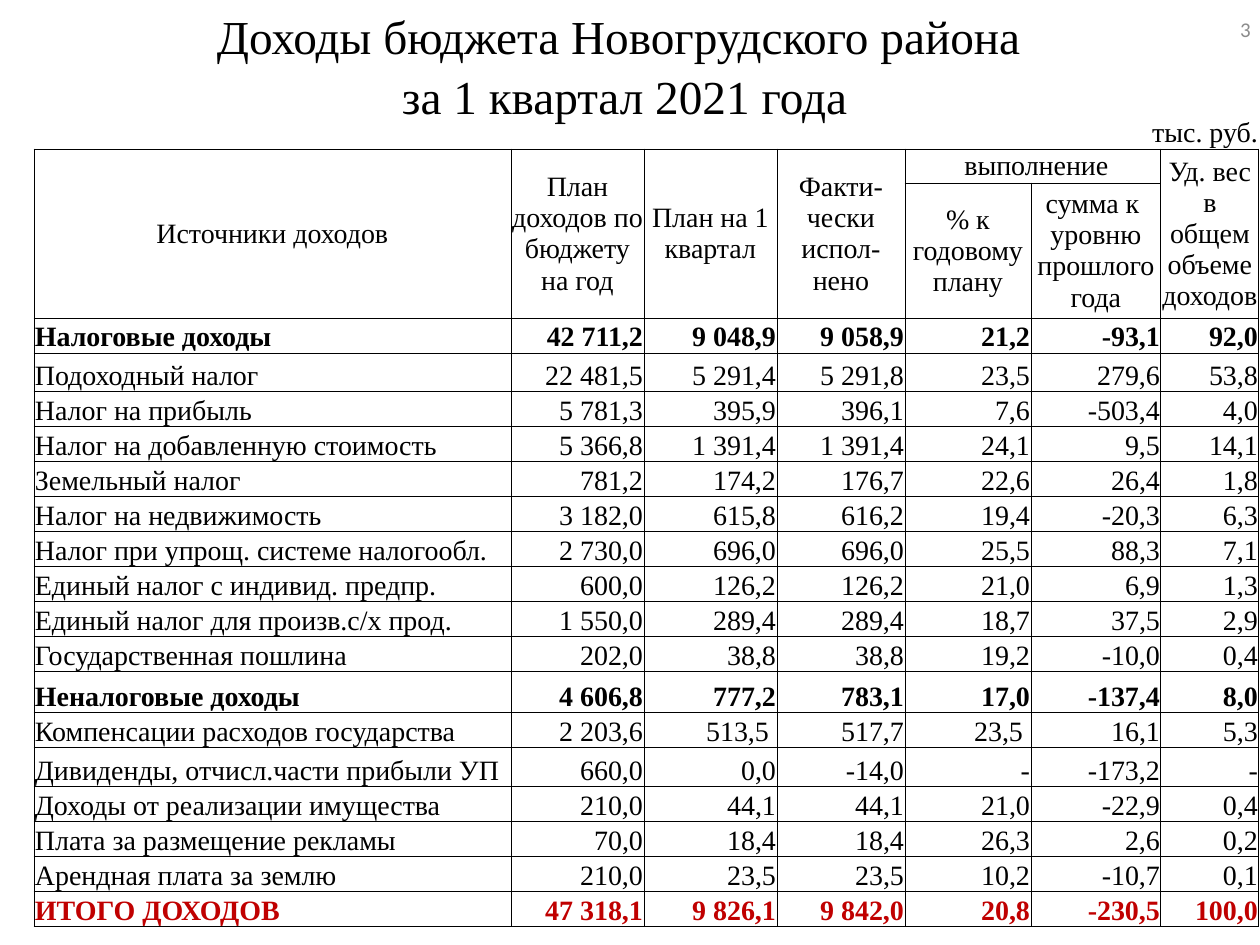
from lxml import etree
from pptx import Presentation
from pptx.dml.color import RGBColor
from pptx.enum.text import MSO_ANCHOR, MSO_AUTO_SIZE, PP_ALIGN
from pptx.oxml.ns import qn
from pptx.util import Emu, Pt

LEFT, CENTER, RIGHT = PP_ALIGN.LEFT, PP_ALIGN.CENTER, PP_ALIGN.RIGHT
MIDDLE, BOTTOM = MSO_ANCHOR.MIDDLE, MSO_ANCHOR.BOTTOM
NO_AUTOFIT = MSO_AUTO_SIZE.NONE
TITLE_ONLY = 5
SERIF, SANS = "Times New Roman", "Calibri"
BLACK, GREY, RED = "000000", "8C8C8C", "C00000"
PX_PER_INCH = 126

HEADER = [
    "|||||тыс. руб.|",
    "Источники доходов|План доходов по бюджету на год|План на 1 квартал|"
    "Факти-чески испол-нено| выполнение||Уд. вес в общем объеме доходов",
    "||||% к годовому плану|сумма к \nуровню прошлого года|",
]
INCOME = [
    "Налоговые доходы|42 711,2|9 048,9|9 058,9|21,2|-93,1|92,0",
    "Подоходный налог|22 481,5|5 291,4|5 291,8|23,5|279,6|53,8",
    "Налог на прибыль|5 781,3|395,9|396,1|7,6|-503,4|4,0",
    "Налог на добавленную стоимость|5 366,8|1 391,4|1 391,4|24,1|9,5|14,1",
    "Земельный налог|781,2|174,2|176,7|22,6|26,4|1,8",
    "Налог на недвижимость|3 182,0|615,8|616,2|19,4|-20,3|6,3",
    "Налог при упрощ. системе налогообл.|2 730,0|696,0|696,0|25,5|88,3|7,1",
    "Единый налог с индивид. предпр.|600,0|126,2|126,2|21,0|6,9|1,3",
    "Единый налог для произв.с/х прод.|1 550,0|289,4|289,4|18,7|37,5|2,9",
    "Государственная пошлина|202,0|38,8|38,8|19,2|-10,0|0,4",
    "Неналоговые доходы|4 606,8|777,2|783,1|17,0|-137,4|8,0",
    "Компенсации расходов государства|2 203,6|513,5 |517,7|23,5 |16,1|5,3",
    "Дивиденды, отчисл.части прибыли УП|660,0|0,0|-14,0|-|-173,2|-",
    "Доходы от реализации имущества|210,0|44,1|44,1|21,0|-22,9|0,4",
    "Плата за размещение рекламы|70,0|18,4|18,4|26,3|2,6|0,2",
    "Арендная плата за землю|210,0|23,5|23,5|10,2|-10,7|0,1",
    "ИТОГО ДОХОДОВ|47 318,1|9 826,1|9 842,0|20,8|-230,5|100,0",
]
SUBTOTALS = ("Налоговые доходы", "Неналоговые доходы")
TOTAL = "ИТОГО ДОХОДОВ"
COLUMN_WIDTHS = [477, 133, 133, 128, 126, 130, 98]
HEADER_HEIGHTS = [34, 34, 135]
INCOME_HEIGHT = 35
TALL_ROWS = {"Подоходный налог": 39, "Неналоговые доходы": 41,
             "Дивиденды, отчисл.части прибыли УП": 39}
MERGES = [((0, 5), (0, 6)), ((1, 4), (1, 5))]
MERGES += [((1, column), (2, column)) for column in (0, 1, 2, 3, 6)]


def px(length):
    return Emu(round(length * 914400 / PX_PER_INCH))


def rgb(color):
    return RGBColor.from_string(color)


def format_text(frame, align, size, font=SERIF, color=BLACK, bold=False):
    for paragraph in frame.paragraphs:
        paragraph.alignment = align
        paragraph.font.size = Pt(size)
        paragraph.font.name = font
        paragraph.font.bold = bold
        paragraph.font.color.rgb = rgb(color)


def set_borders(cell, drawn_sides):
    properties = cell._tc.get_or_add_tcPr()
    for position, side in enumerate("LRTB"):
        line = etree.Element(qn(f"a:ln{side}"), w=str(Pt(0.5)))
        if side in drawn_sides:
            fill = etree.SubElement(line, qn("a:solidFill"))
            etree.SubElement(fill, qn("a:srgbClr"), val=BLACK)
        else:
            etree.SubElement(line, qn("a:noFill"))
        properties.insert(position, line)


def place_title(slide, left, top, width, height):
    title = slide.shapes.title
    title.left, title.top, title.width, title.height = map(px, (left, top, width, height))
    frame = title.text_frame
    frame.text = "Доходы бюджета Новогрудского района \vза 1 квартал 2021 года"
    frame.auto_size = NO_AUTOFIT
    frame.vertical_anchor = MIDDLE
    frame.paragraphs[0].line_spacing = 1.05
    format_text(frame, CENTER, 27)


def fill_cell(cell, text, row, column, label):
    cell.margin_left = cell.margin_right = cell.margin_top = px(1)
    cell.margin_bottom = 0
    cell.fill.background()
    set_borders(cell, "LRTB" if row else "B")
    cell.text = text
    in_header = row in (1, 2)
    cell.vertical_anchor = MIDDLE if in_header else BOTTOM
    if in_header:
        align = CENTER
    else:
        align = RIGHT if column else LEFT
    format_text(cell.text_frame, align, 16,
                color=RED if label == TOTAL else BLACK,
                bold=label == TOTAL or label in SUBTOTALS)


def place_income_table(slide, left, top):
    rows = [line.split("|") for line in HEADER + INCOME]
    heights = HEADER_HEIGHTS + [TALL_ROWS.get(row[0], INCOME_HEIGHT)
                                for row in rows[len(HEADER):]]
    table = slide.shapes.add_table(
        len(rows), len(COLUMN_WIDTHS), px(left), px(top),
        px(sum(COLUMN_WIDTHS)), px(sum(heights))).table
    table.first_row = table.horz_banding = False
    for column, width in zip(table.columns, COLUMN_WIDTHS):
        column.width = px(width)
    for row, (texts, height) in enumerate(zip(rows, heights)):
        table.rows[row].height = px(height)
        for column, text in enumerate(texts):
            fill_cell(table.cell(row, column), text, row, column, texts[0])
    for first, last in MERGES:
        table.cell(*first).merge(table.cell(*last))


def place_page_number(slide, left, top, width, height):
    frame = slide.shapes.add_textbox(*map(px, (left, top, width, height))).text_frame
    frame.word_wrap = True
    frame.vertical_anchor = MIDDLE
    frame.text = "3"
    format_text(frame, RIGHT, 12, SANS, GREY)


def main():
    presentation = Presentation()
    presentation.slide_width, presentation.slide_height = px(1260), px(945)
    slide = presentation.slides.add_slide(presentation.slide_layouts[TITLE_ONLY])
    place_title(slide, 29, 20, 1191, 88)
    place_income_table(slide, 34, 115)
    place_page_number(slide, 969, 4, 294, 50)
    presentation.save("out.pptx")


if __name__ == "__main__":
    main()
